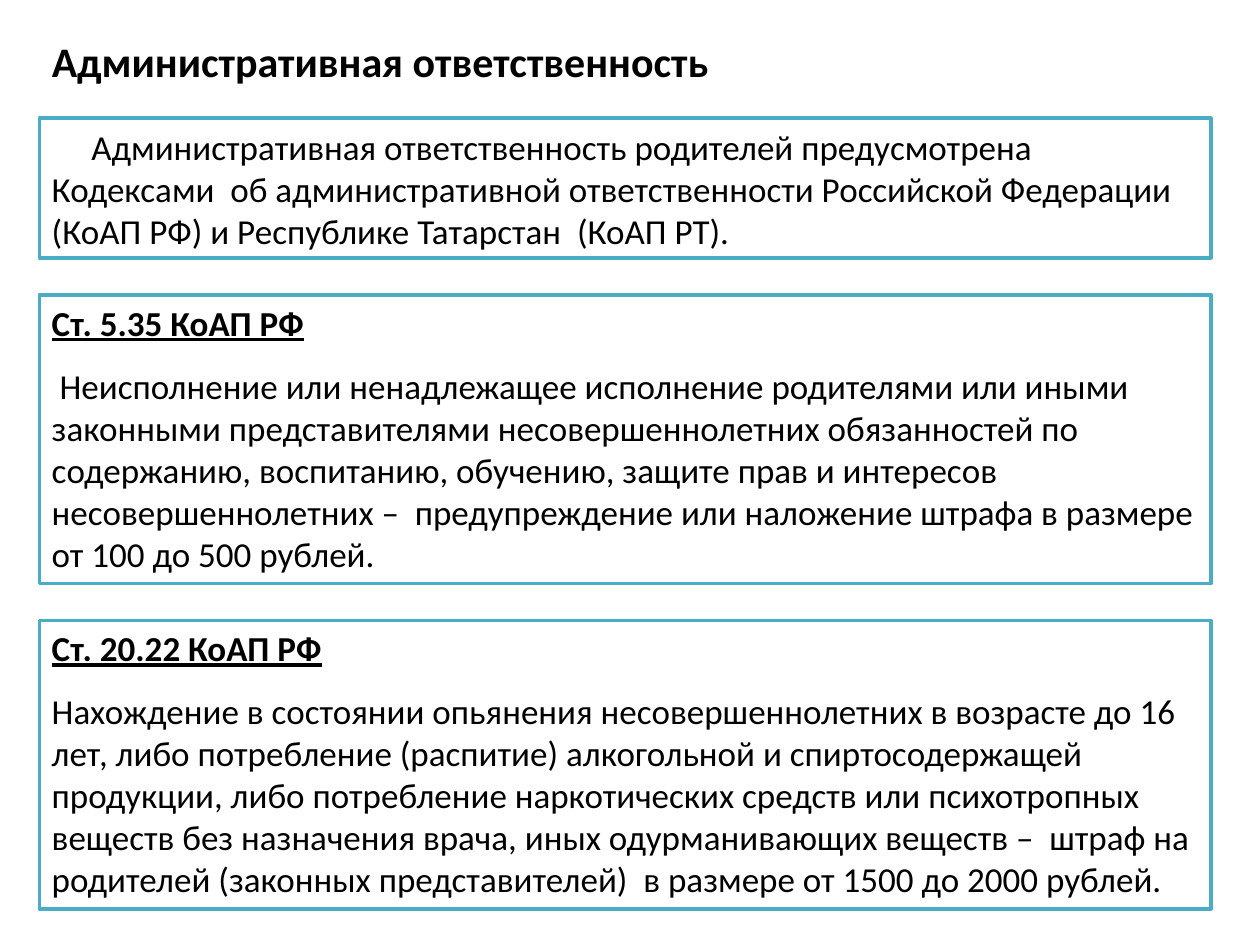
from pptx import Presentation
from pptx.dml.color import RGBColor
from pptx.enum.shapes import MSO_SHAPE
from pptx.enum.text import MSO_ANCHOR, PP_ALIGN
from pptx.util import Pt

COLORS = {"text": "000000", "fill": "FFFFFF", "border": "4BACC6"}
LEFT, WIDTH, GAP = 22.5, 669.5, 21


class SlideBuilder:
    font = "Calibri"
    body_size = 20
    title_size = 24
    border_width = 2

    def __init__(self, slide):
        self.slide = slide

    def color(self, name):
        return RGBColor.from_string(COLORS[name])

    def paragraph(self, para, text, size, bold=False, underline=False,
                  align=PP_ALIGN.LEFT, indent=0, after=0):
        para.alignment = align
        para.space_after = Pt(after)
        if indent:
            para._p.get_or_add_pPr().set("indent", str(Pt(indent)))
        span = para.add_run()
        span.text = text
        span.font.name = self.font
        span.font.size = Pt(size)
        span.font.bold = bold
        span.font.underline = underline
        span.font.color.rgb = self.color("text")

    def title(self, text, left, top, width, height):
        box = self.slide.shapes.add_textbox(Pt(left), Pt(top), Pt(width), Pt(height))
        frame = box.text_frame
        frame.word_wrap = True
        frame.vertical_anchor = MSO_ANCHOR.MIDDLE
        self.paragraph(frame.paragraphs[0], text, self.title_size, bold=True,
                       align=PP_ALIGN.JUSTIFY)

    def panel(self, top, height, body, heading=None, indent=0):
        box = self.slide.shapes.add_shape(
            MSO_SHAPE.RECTANGLE, Pt(LEFT), Pt(top), Pt(WIDTH), Pt(height))
        box.shadow.inherit = False
        box.fill.solid()
        box.fill.fore_color.rgb = self.color("fill")
        box.line.color.rgb = self.color("border")
        box.line.width = Pt(self.border_width)
        frame = box.text_frame
        frame.word_wrap = True
        frame.vertical_anchor = MSO_ANCHOR.TOP if heading else MSO_ANCHOR.MIDDLE
        para = frame.paragraphs[0]
        if heading:
            self.paragraph(para, heading, self.body_size, bold=True,
                           underline=True, after=12)
            para = frame.add_paragraph()
        self.paragraph(para, body, self.body_size, indent=indent)


def main():
    deck = Presentation()
    deck.slide_width, deck.slide_height = Pt(720), Pt(540)
    page = SlideBuilder(deck.slides.add_slide(deck.slide_layouts[6]))
    page.title("Административная ответственность", LEFT, 16.5, 405.5, 36)

    panels = [
        (80, None, 22.6,
         "Административная ответственность родителей предусмотрена Кодексами  об "
         "административной ответственности Российской Федерации (КоАП РФ) и "
         "Республике Татарстан  (КоАП РТ)."),
        (165, "Ст. 5.35 КоАП РФ", 4.5,
         "Неисполнение или ненадлежащее исполнение родителями или иными законными "
         "представителями несовершеннолетних обязанностей по содержанию, воспитанию, "
         "обучению, защите прав и интересов несовершеннолетних –  предупреждение или "
         "наложение штрафа в размере от 100 до 500 рублей."),
        (165, "Ст. 20.22 КоАП РФ", 0,
         "Нахождение в состоянии опьянения несовершеннолетних в возрасте до 16 лет, "
         "либо потребление (распитие) алкогольной и спиртосодержащей продукции, либо "
         "потребление наркотических средств или психотропных веществ без назначения "
         "врача, иных одурманивающих веществ –  штраф на родителей (законных "
         "представителей)  в размере от 1500 до 2000 рублей."),
    ]
    top = 67.5
    for height, heading, indent, body in panels:
        page.panel(top, height, body, heading, indent)
        top += height + GAP

    deck.save("out.pptx")


if __name__ == "__main__":
    main()
